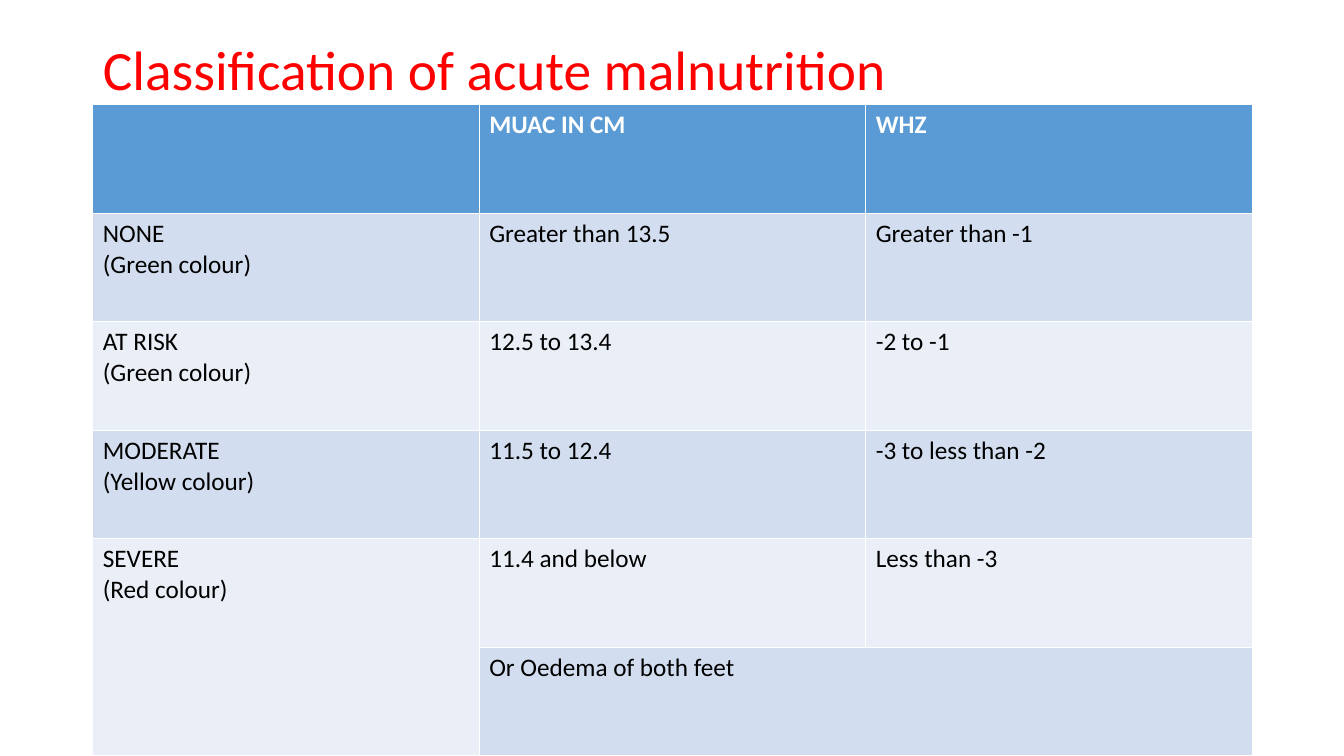
from pptx import Presentation
from pptx.dml.color import RGBColor
from pptx.enum.text import MSO_ANCHOR, MSO_AUTO_SIZE, PP_ALIGN
from pptx.util import Inches, Pt

LEFT = PP_ALIGN.LEFT
MIDDLE = MSO_ANCHOR.MIDDLE
NO_FIT = MSO_AUTO_SIZE.NONE

COLORS = {"title": "FF0000", "header": "5B9BD5", "odd": "D2DEEF",
          "even": "EAEFF7", "light": "FFFFFF", "dark": "000000"}
ROWS = [
    ["", "MUAC IN CM", "WHZ"],
    ["NONE\n(Green colour)", "Greater than 13.5", "Greater than -1"],
    ["AT RISK\n(Green colour)", "12.5 to 13.4", "-2 to -1"],
    ["MODERATE\n(Yellow colour)", "11.5 to 12.4", "-3 to less than -2"],
    ["SEVERE\n(Red colour)", "11.4 and below", "Less than -3"],
    ["", "Or Oedema of both feet", ""],
]


def format_text(text_frame, color, formats):
    for paragraph in text_frame.paragraphs:
        paragraph.alignment = LEFT
        paragraph.font.color.rgb = RGBColor.from_string(COLORS[color])
        for name, value in formats.items():
            setattr(paragraph.font, name, value)


presentation = Presentation()
presentation.slide_width = Inches(13.33)
presentation.slide_height = Inches(7.5)
slide = presentation.slides.add_slide(presentation.slide_layouts[5])

left, width = Inches(0.92), Inches(11.5)
title_top, table_top = Inches(0.4), Inches(1.04)

title = slide.shapes.title
title_box = {"left": left, "top": title_top, "width": width,
             "height": table_top - title_top}
for name, value in title_box.items():
    setattr(title, name, value)
title_frame = title.text_frame
title_frame.text = "Classification of acute malnutrition"
title_frame.auto_size = NO_FIT
title_frame.vertical_anchor = MIDDLE
title_frame.paragraphs[0].line_spacing = 0.9
format_text(title_frame, "title", {"name": "Calibri", "size": Pt(39.6)})

table_height = presentation.slide_height - table_top
table = slide.shapes.add_table(
    len(ROWS), len(ROWS[0]), left, table_top, width, table_height).table

for row_index, row in enumerate(ROWS):
    is_header = row_index == 0
    fill = "header" if is_header else ("even", "odd")[row_index % 2]
    for column_index, text in enumerate(row):
        cell = table.cell(row_index, column_index)
        cell.text = text
        cell.fill.solid()
        cell.fill.fore_color.rgb = RGBColor.from_string(COLORS[fill])
        format_text(cell.text_frame, "light" if is_header else "dark",
                    {"name": "Calibri", "size": Pt(18), "bold": is_header})

table.cell(4, 0).merge(table.cell(5, 0))
table.cell(5, 1).merge(table.cell(5, 2))

presentation.save("out.pptx")
